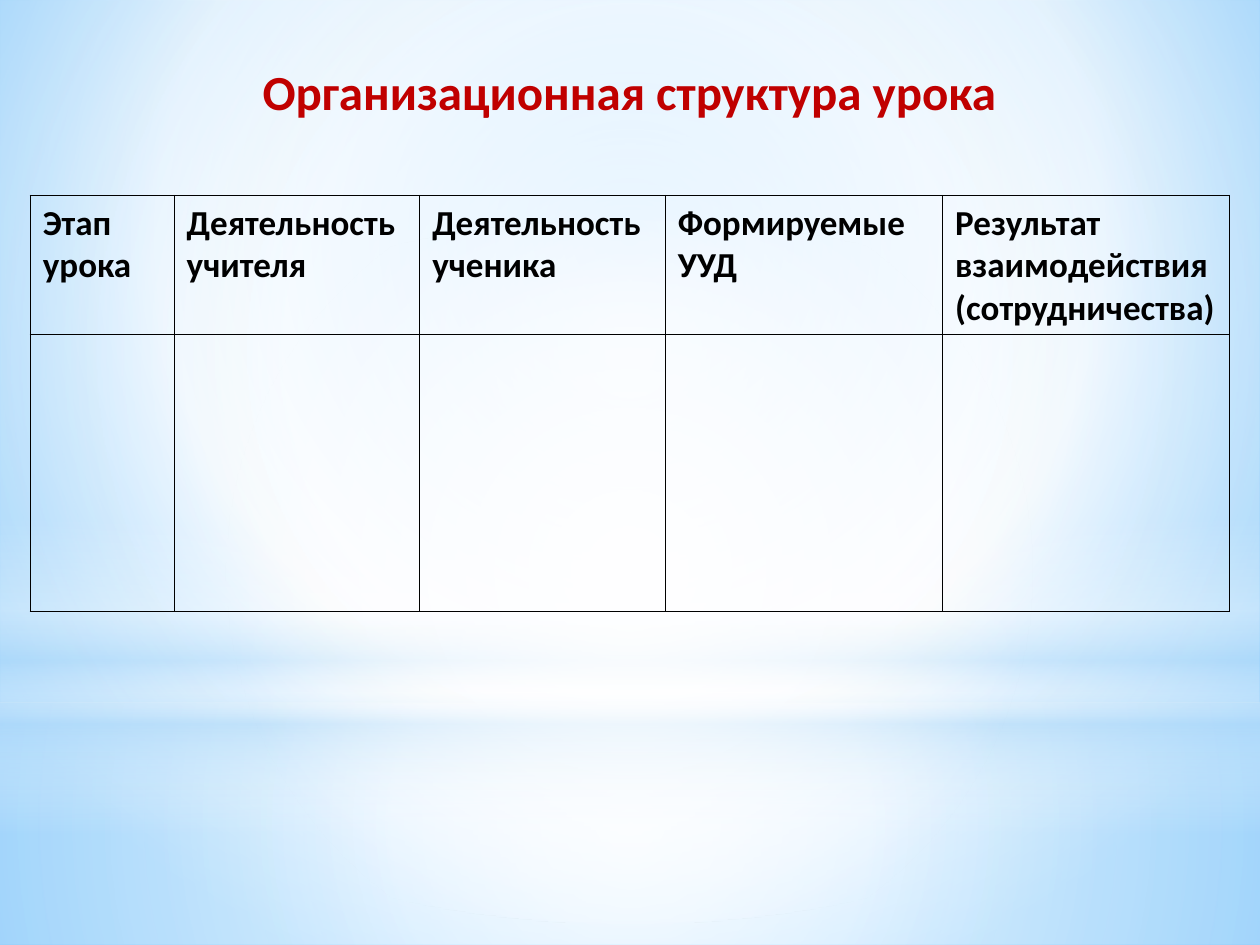
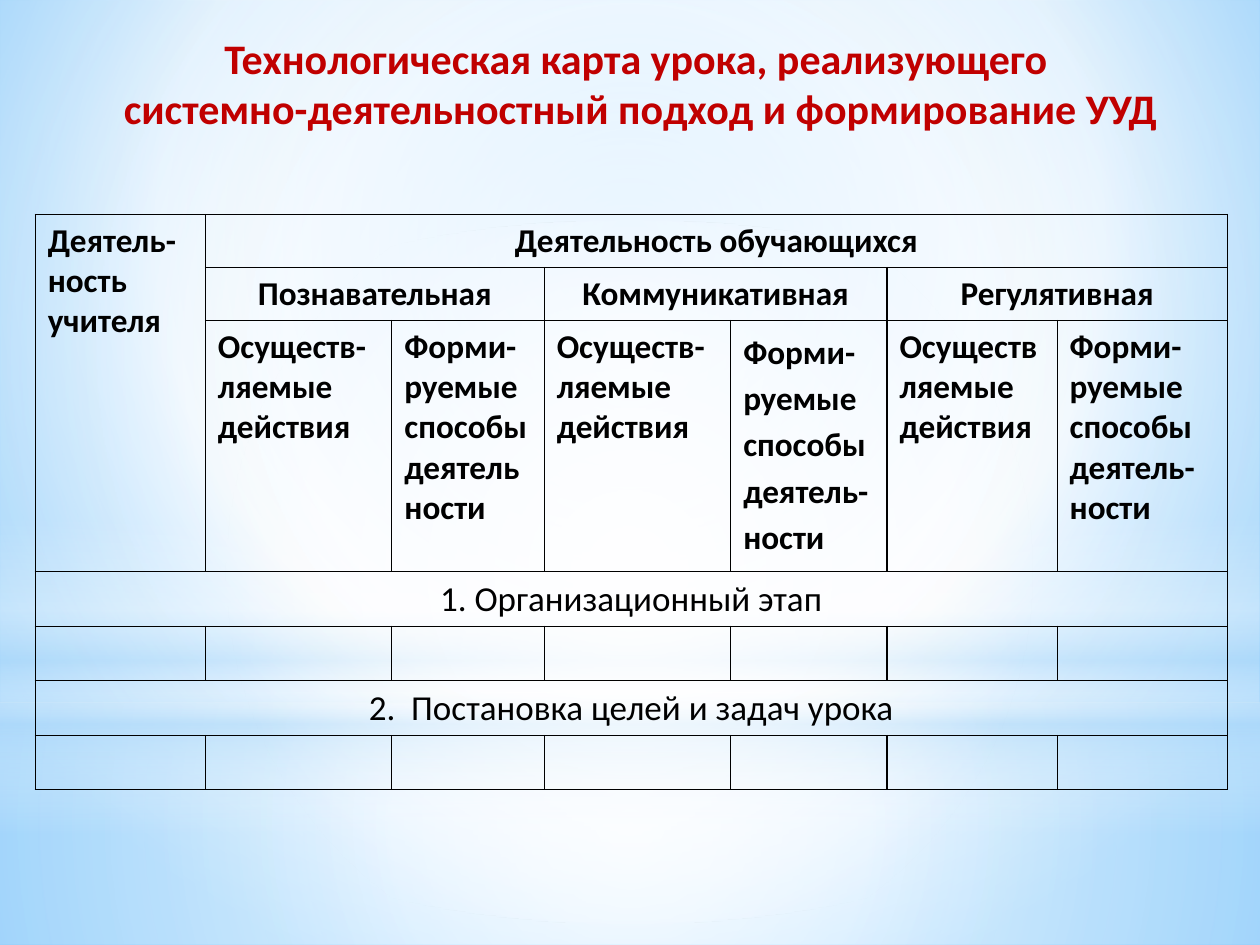
from pptx import Presentation
from pptx.dml.color import RGBColor
from pptx.enum.shapes import MSO_SHAPE
from pptx.enum.text import MSO_AUTO_SIZE, PP_ALIGN
from pptx.oxml import parse_xml
from pptx.oxml.ns import nsdecls, qn
from pptx.util import Cm, Pt

RECT, OVAL = MSO_SHAPE.RECTANGLE, MSO_SHAPE.OVAL
LEFT, MID = PP_ALIGN.LEFT, PP_ALIGN.CENTER
GROW = MSO_AUTO_SIZE.SHAPE_TO_FIT_TEXT

HUES = {"sky": "9ED5FF", "deep": "5BB9FF", "mist": "B4DCFA",
        "white": "FFFFFF", "red": "C00000", "black": "000000"}
WIDE, HIGH = 25.4, 19.05
HALF = (50, 50, 50, 50)


def shade(grad, stops, rect):
    """Fill with stops of (place, hue, opacity): round if rect, else downward."""
    for part in list(grad):
        grad.remove(part)
    marks = "".join(
        f'<a:gs pos="{place * 1000}"><a:srgbClr val="{HUES[hue]}">'
        f'<a:alpha val="{alpha * 1000}"/></a:srgbClr></a:gs>'
        for place, hue, alpha in stops)
    grad.append(parse_xml(f'<a:gsLst {nsdecls("a")}>{marks}</a:gsLst>'))
    if rect:
        sides = " ".join(f'{side}="{value * 1000}"' for side, value in zip("ltrb", rect))
        tail = f'<a:path {nsdecls("a")} path="circle"><a:fillToRect {sides}/></a:path>'
    else:
        tail = f'<a:lin {nsdecls("a")} ang="5400000" scaled="0"/>'
    grad.append(parse_xml(tail))


def write(frame, lines, hue, align, **form):
    """Set one paragraph a line, with the font values in form."""
    frame.text = "\n".join(lines)
    for para in frame.paragraphs:
        para.alignment = align
        font = para.runs[0].font
        for key, value in {"name": "Calibri", "bold": True, **form}.items():
            setattr(font, key, value)
        font.color.rgb = RGBColor.from_string(HUES[hue])


deck = Presentation()
deck.slide_width, deck.slide_height = Cm(WIDE), Cm(HIGH)
blank = deck.slide_layouts[6]
base = deck.slide_master

# Shared backdrop
base.background.fill.gradient()
shade(base.element.find(".//" + qn("a:gradFill")),
      [(0, "sky", 100), (60, "white", 100), (100, "deep", 100)], (20, 10, 20, 60))

# Shared bands of light: kind, top, height, stops, centre
bands = [
    (RECT, 14.17, 4.88, [(0, "white", 91), (37, "white", 76), (100, "mist", 79)], HALF),
    (RECT, 0, 14.17, [(0, "white", 89), (48, "white", 62), (100, "mist", 79)], HALF),
    (RECT, 10.46, 6.35, [(0, "white", 0), (29, "white", 30), (45, "mist", 40),
                         (55, "white", 26), (65, "mist", 60), (100, "white", 0)], None),
    (OVAL, 4.45, 14.17, [(0, "white", 100), (56, "white", 0)], HALF),
]

# Slide contents; cells are row, column, text, rows spanned, columns spanned
acts, ways = "Осуществ-ляемые действия", "Форми-руемые способы деятель-ности"
heads = ["Этап урока", "Деятельность учителя", "Деятельность ученика",
         "Формируемые УУД", "Результат взаимодействия (сотрудничества)"]
kinds = ["Познавательная", "Коммуникативная", "Регулятивная"]
steps = [acts, "Форми-руемые способы деятельности", acts, ways,
         "Осуществляемые действия", ways]
plans = [
    {"title": ["Организационная структура урока"], "size": 28, "wrap": False,
     "box": (4.95, 1.12, 15.47, 1.45), "spot": (0.61, 3.94), "text": 20,
     "cols": [2.9, 4.95, 4.95, 5.59, 5.79], "rows": [2.79, 5.59],
     "cells": [(0, col, head, 1, 1) for col, head in enumerate(heads)],
     "mid": [], "plain": [], "loose": None},
    {"title": ["Технологическая карта урока, реализующего ",
               "системно-деятельностный подход и формирование УУД"],
     "size": 24, "wrap": True,
     "box": (0.71, 0.53, 24.41, 3.33), "spot": (0.71, 4.32), "text": 19,
     "cols": [3.43, 3.76, 3.07, 3.76, 3.15, 3.43, 3.43],
     "rows": [1.07, 1.07, 5.06] + [1.1] * 4,
     "cells": [(0, 0, "Деятель-ность учителя", 3, 1),
               (0, 1, "Деятельность обучающихся", 1, 6),
               *[(1, 1 + 2 * num, kind, 1, 2) for num, kind in enumerate(kinds)],
               *[(2, col, step, 1, 1) for col, step in enumerate(steps, 1)],
               (3, 0, "1. Организационный этап", 1, 7),
               (5, 0, "2.  Постановка целей и задач урока", 1, 7)],
     "mid": [1, 3, 5], "plain": [3, 5], "loose": (2, 4)},
]

for plan in plans:
    slide = deck.slides.add_slide(blank)

    # Bands are drawn once and moved to the master
    while bands:
        kind, top, high, stops, rect = bands.pop(0)
        band = slide.shapes.add_shape(kind, 0, Cm(top), Cm(WIDE), Cm(high))
        band.shadow.inherit = False
        band.line.fill.background()
        band.fill.gradient()
        shade(band.element.spPr.find(qn("a:gradFill")), stops, rect)
        base.element.cSld.spTree.append(band.element)

    # Title
    frame = slide.shapes.add_textbox(*map(Cm, plan["box"])).text_frame
    frame.word_wrap, frame.auto_size = plan["wrap"], GROW
    write(frame, plan["title"], "red", MID, size=Pt(plan["size"]))

    # Table grid
    cols, rows = plan["cols"], plan["rows"]
    table = slide.shapes.add_table(len(rows), len(cols), *map(Cm, plan["spot"]),
                                   Cm(sum(cols)), Cm(sum(rows))).table
    table.first_row = table.horz_banding = False
    for col, wide in zip(table.columns, cols):
        col.width = Cm(wide)
    for row, high in zip(table.rows, rows):
        row.height = Cm(high)

    # Borders and clear fills
    for cell in table.iter_cells():
        props = cell._tc.get_or_add_tcPr()
        for side in "LRTB":
            props.append(parse_xml(
                f'<a:ln{side} {nsdecls("a")} w="{Pt(0.75)}"><a:solidFill>'
                f'<a:srgbClr val="{HUES["black"]}"/></a:solidFill></a:ln{side}>'))
        cell.fill.background()

    # Cell text
    for row, col, text, down, over in plan["cells"]:
        cell = table.cell(row, col)
        if down * over > 1:
            cell.merge(table.cell(row + down - 1, col + over - 1))
        plain = row in plan["plain"]
        align = MID if row in plan["mid"] or over > 1 else LEFT
        write(cell.text_frame, [text], "black", align,
              size=Pt(20 if plain else plan["text"]), bold=not plain)
        if (row, col) == plan["loose"]:
            cell.text_frame.paragraphs[0].line_spacing = 1.15

deck.save("out.pptx")
